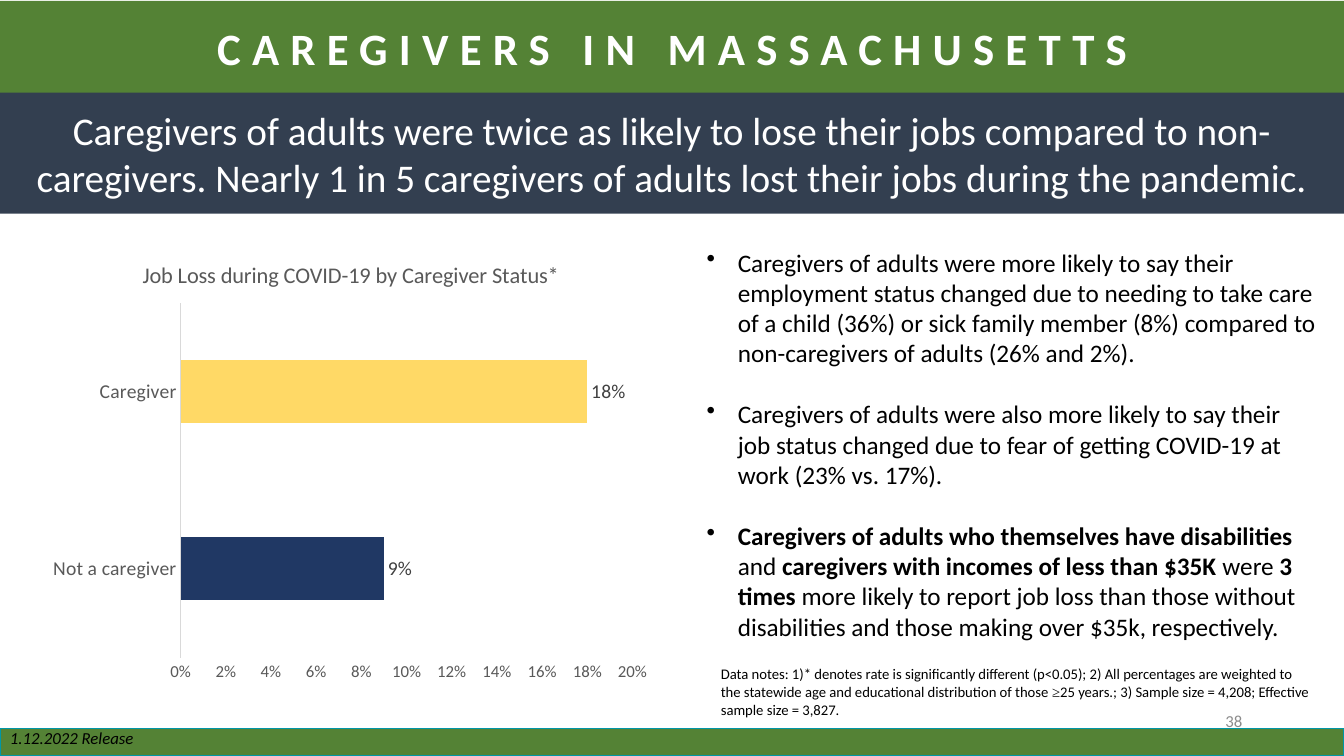
from lxml import etree
from pptx import Presentation
from pptx.chart.data import CategoryChartData
from pptx.dml.color import RGBColor
from pptx.enum.chart import XL_CHART_TYPE, XL_LABEL_POSITION, XL_TICK_MARK
from pptx.enum.shapes import MSO_SHAPE
from pptx.enum.text import MSO_ANCHOR, PP_ALIGN
from pptx.oxml import parse_xml
from pptx.oxml.ns import nsdecls, qn
from pptx.util import Inches, Pt

RECT = MSO_SHAPE.RECTANGLE
BAR = XL_CHART_TYPE.BAR_CLUSTERED
OUTSIDE = XL_LABEL_POSITION.OUTSIDE_END
NO_TICK = XL_TICK_MARK.NONE
TOP, MIDDLE = MSO_ANCHOR.TOP, MSO_ANCHOR.MIDDLE
LEFT, CENTER, RIGHT = PP_ALIGN.LEFT, PP_ALIGN.CENTER, PP_ALIGN.RIGHT

GREEN = RGBColor(0x54, 0x82, 0x35)
TEAL = RGBColor(0x00, 0x97, 0xA7)
SLATE = RGBColor(0x33, 0x3F, 0x50)
NAVY = RGBColor(0x20, 0x38, 0x64)
YELLOW = RGBColor(0xFF, 0xD9, 0x66)
WHITE = RGBColor(0xFF, 0xFF, 0xFF)
BLACK = RGBColor(0x00, 0x00, 0x00)
DARK_GRAY = RGBColor(0x40, 0x40, 0x40)
GRAY = RGBColor(0x59, 0x59, 0x59)
MID_GRAY = RGBColor(0x8C, 0x8C, 0x8C)
LIGHT_GRAY = RGBColor(0xD9, 0xD9, 0xD9)


class SlideBuilder:
    font = "Calibri"

    def __init__(self, slide):
        self.slide = slide

    def set_font(self, font, size, color, bold=False, italic=False):
        font.name, font.size, font.color.rgb = self.font, Pt(size), color
        font.bold, font.italic = bold, italic

    def band(self, box, fill, line=None):
        s = self.slide.shapes.add_shape(RECT, *map(Inches, box))
        s.shadow.inherit = False
        s.fill.solid()
        s.fill.fore_color.rgb = fill
        if line is None:
            s.line.fill.background()
        else:
            s.line.color.rgb, s.line.width = line, Pt(1)
        return s

    def set_text(self, s, text, size, color, align=LEFT, anchor=MIDDLE, italic=False):
        tf = s.text_frame
        tf.word_wrap, tf.vertical_anchor = True, anchor
        p = tf.paragraphs[0]
        p.text, p.alignment = text, align
        self.set_font(p.font, size, color, italic=italic)
        return p

    def textbox(self, box):
        return self.slide.shapes.add_textbox(*map(Inches, box))

    def bullets(self, box, items, size, gap):
        """Each item is a list of (text, bold) runs."""
        tf = self.textbox(box).text_frame
        tf.word_wrap = True
        for i, runs in enumerate(items):
            p = tf.paragraphs[0] if i == 0 else tf.add_paragraph()
            self.set_font(p.font, size, BLACK)
            p.space_before = Pt(gap if i else 0)
            pPr = p._p.get_or_add_pPr()
            pPr.set("marL", str(Inches(0.31)))
            pPr.set("indent", str(-Inches(0.31)))
            bullet = etree.Element(qn("a:buChar"), char="•")
            pPr.find(qn("a:defRPr")).addprevious(bullet)
            for text, bold in runs:
                r = p.add_run()
                r.text, r.font.bold = text, bold

    def bar_chart(self, box, title, values, colors):
        data = CategoryChartData(number_format="0%")
        data.categories = list(values)
        data.add_series("Series 1", list(values.values()))
        chart = self.slide.shapes.add_chart(BAR, *map(Inches, box), data).chart
        self.set_font(chart.font, 10, BLACK)
        chart.has_legend = False
        chart.has_title = True
        p = chart.chart_title.text_frame.paragraphs[0]
        p.text = title
        self.set_font(p.font, 16, GRAY)

        # Axes
        for axis, size in ((chart.category_axis, 14), (chart.value_axis, 12)):
            axis.major_tick_mark = axis.minor_tick_mark = NO_TICK
            axis.has_major_gridlines = False
            self.set_font(axis.tick_labels.font, size, GRAY)
        line = chart.category_axis.format.line
        line.color.rgb, line.width = LIGHT_GRAY, Pt(0.75)
        axis = chart.value_axis
        axis.format.line.fill.background()
        axis.minimum_scale, axis.maximum_scale, axis.major_unit = 0, 0.2, 0.02
        axis.tick_labels.number_format = "0%"
        axis.tick_labels.number_format_is_linked = False

        # Bars and value labels
        plot = chart.plots[0]
        plot.gap_width, plot.vary_by_categories = 182, False
        for i, color in enumerate(colors):
            fill = plot.series[0].points[i].format.fill
            fill.solid()
            fill.fore_color.rgb = color
        plot.has_data_labels = True
        labels = plot.data_labels
        labels.show_value, labels.position = True, OUTSIDE
        labels.number_format, labels.number_format_is_linked = "0%", False
        self.set_font(labels.font, 14, DARK_GRAY)

        # Plot area placement, as fractions of the chart
        area = chart._chartSpace.chart.plotArea
        for old in area.findall(qn("c:layout")):
            area.remove(old)
        places = "".join(f'<c:{k} val="{v}"/>' for k, v in
                         (("x", 0.225), ("y", 0.135), ("w", 0.73), ("h", 0.79)))
        area.insert(0, parse_xml(
            f'<c:layout {nsdecls("c")}><c:manualLayout><c:layoutTarget val="inner"/>'
            f'<c:xMode val="edge"/><c:yMode val="edge"/>{places}'
            '</c:manualLayout></c:layout>'))


def main():
    prs = Presentation()
    prs.slide_width, prs.slide_height = Inches(13.33), Inches(7.5)
    b = SlideBuilder(prs.slides.add_slide(prs.slide_layouts[6]))

    # Header and footer bands
    header = b.band((0, 0.01, 13.34, 1), GREEN)
    p = b.set_text(header, "CAREGIVERS IN MASSACHUSETTS", 32, WHITE, CENTER)
    p.font.bold, p.line_spacing = True, 0.9
    p.runs[0].font._element.set("spc", "800")
    b.band((0, 7.23, 13.33, 0.27), GREEN, TEAL)
    message = b.band((-0.01, 0.92, 13.34, 1.2), SLATE)
    b.set_text(message, "Caregivers of adults were twice as likely to lose their jobs "
               "compared to non-caregivers. Nearly 1 in 5 caregivers of adults lost "
               "their jobs during the pandemic.", 28, WHITE, CENTER)

    # Job loss chart
    b.bar_chart((0.41, 2.4, 6.14, 4.46), "Job Loss during COVID-19 by Caregiver Status*",
                {"Not a caregiver": 0.09, "Caregiver": 0.18}, (NAVY, YELLOW))

    # Findings
    b.bullets((6.91, 2.4, 6.26, 4.04), [
        [("Caregivers of adults were more likely to say their employment status "
          "changed due to needing to take care of a child (36%) or sick family "
          "member (8%) compared to non-caregivers of adults (26% and 2%).", False)],
        [("Caregivers of adults were also more likely to say their job status "
          "changed due to fear of getting COVID-19 at work (23% vs. 17%).", False)],
        [("Caregivers of adults who themselves have disabilities ", True),
         ("and ", False),
         ("caregivers with incomes of less than $35K ", True),
         ("were ", False),
         ("3 times ", True),
         ("more likely to report job loss than those without disabilities and "
          "those making over $35k, respectively.", False)],
    ], size=18, gap=22)

    # Data notes
    notes = b.textbox((7.02, 6.53, 6.14, 0.66))
    tf = notes.text_frame
    tf.margin_left = tf.margin_right = Inches(0.13)
    tf.margin_top = tf.margin_bottom = Inches(0.07)
    p = b.set_text(notes, "Data notes: 1)* denotes rate is significantly different "
                   "(p<0.05); 2) All percentages are weighted to the statewide age and "
                   "educational distribution of those ", 10.5, BLACK, anchor=TOP)
    r = p.add_run()
    r.text, r.font.name = "≥", "Times New Roman"
    p.add_run().text = ("25 years.; 3) Sample size = 4,208; "
                        "Effective sample size = 3,827.")

    # Release date and slide number
    b.set_text(b.textbox((0, 7.18, 3, 0.28)), "1.12.2022 Release", 12, BLACK, italic=True)
    b.set_text(b.textbox((9.42, 6.95, 3, 0.4)), "38", 12, MID_GRAY, RIGHT)

    prs.save("out.pptx")


if __name__ == "__main__":
    main()
